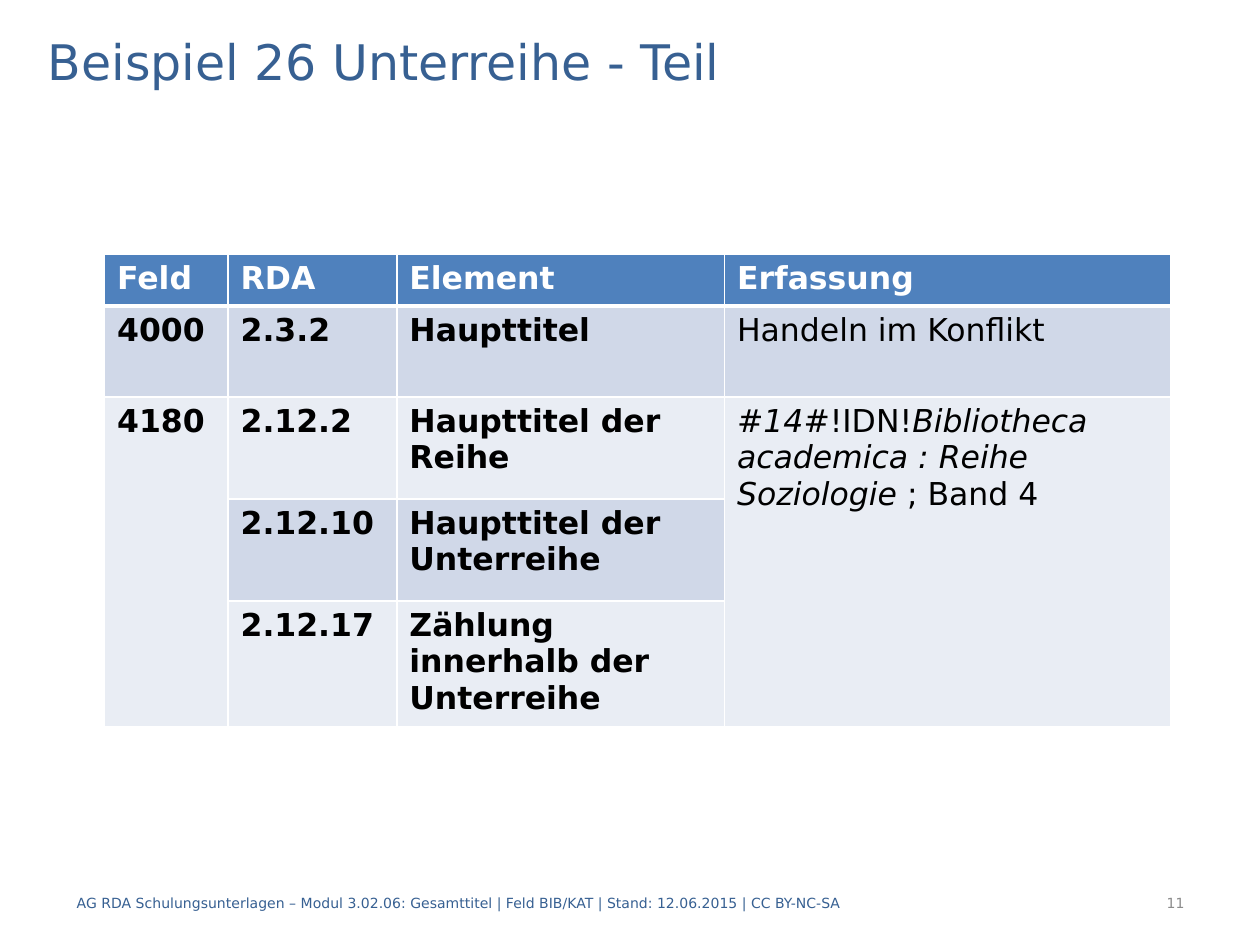
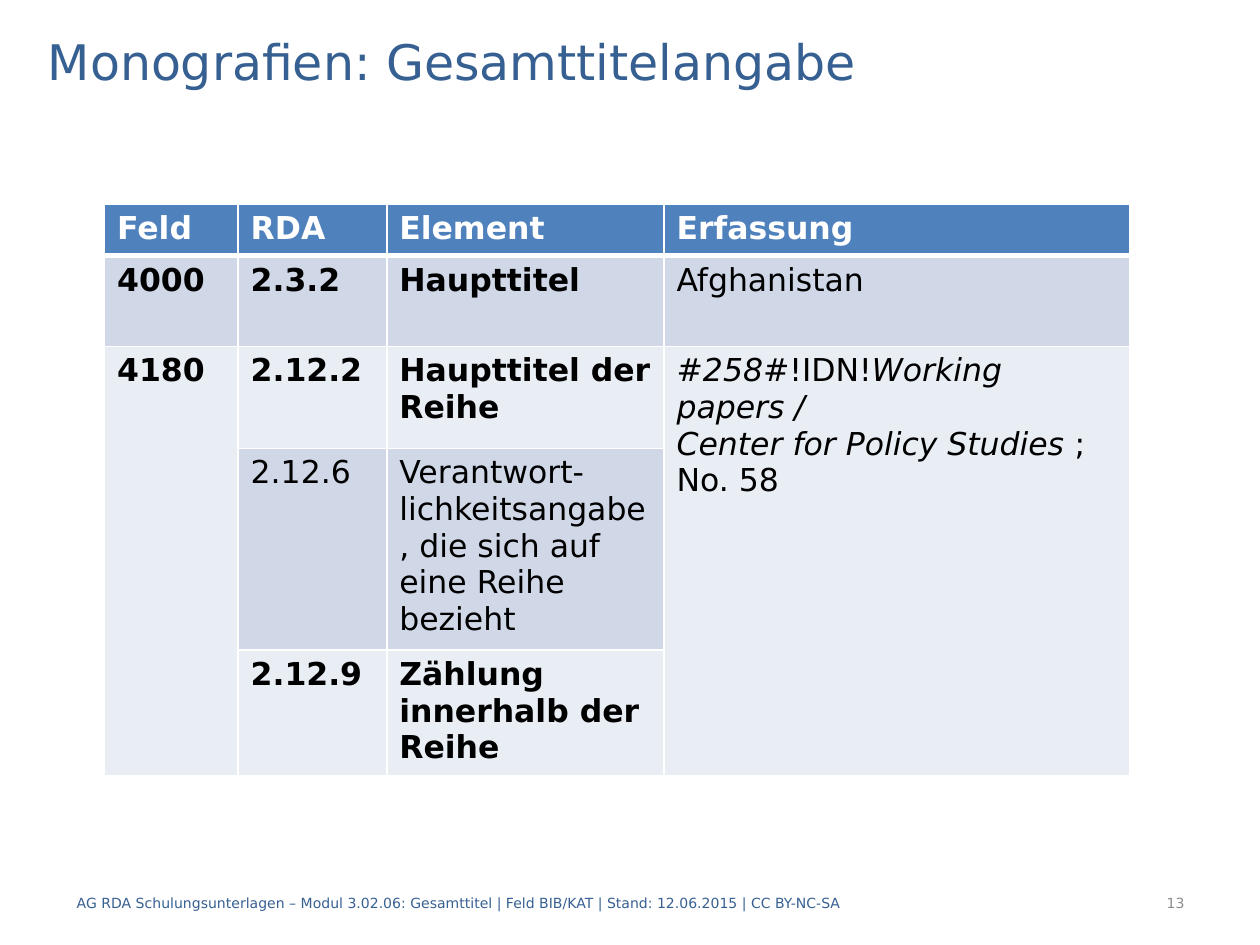
from lxml import etree
from pptx import Presentation
from pptx.dml.color import RGBColor
from pptx.enum.text import MSO_ANCHOR, MSO_AUTO_SIZE, PP_ALIGN
from pptx.oxml.ns import qn
from pptx.util import Inches, Pt

LEFT, RIGHT = PP_ALIGN.LEFT, PP_ALIGN.RIGHT
MIDDLE = MSO_ANCHOR.MIDDLE
NO_AUTOFIT = MSO_AUTO_SIZE.NONE
TITLE_ONLY = 5

FONT = "DejaVu Sans"
NAVY, GREY, WHITE, BLACK = "376092", "8C8C8C", "FFFFFF", "000000"
HEADER_FILL = "4F81BD"
BAND_FILLS = ("D0D8E8", "E9EDF4")

HEADINGS = ("Feld", "RDA", "Element", "Erfassung")
ROW_HEIGHTS = (0.41, 0.72, 0.81, 0.81, 0.81)
FOOTER = ("AG RDA Schulungsunterlagen – Modul 3.02.06: Gesamttitel | "
          "Feld BIB/KAT | Stand: 12.06.2015 | CC BY-NC-SA")

# Series elements are (RDA number, element name, is core element).
# A series statement is a list of paragraphs, each a list of (text, italic).
EXAMPLES = [
    {
        "title": "Beispiel 26 Unterreihe - Teil",
        "page": "11",
        "table_at": (0.83, 2.02),
        "widths": (0.98, 1.34, 2.6, 3.54),
        "main_title": "Handeln im Konflikt",
        "elements": [
            ("2.12.2", "Haupttitel der Reihe", True),
            ("2.12.10", "Haupttitel der Unterreihe", True),
            ("2.12.17", "Zählung innerhalb der Unterreihe", True),
        ],
        "statement": [
            [("#", False), ("14", True), ("#!IDN!", False),
             ("Bibliotheca academica : Reihe Soziologie ", True),
             ("; Band 4", False)],
        ],
    },
    {
        "title": "Monografien: Gesamttitelangabe",
        "page": "13",
        "table_at": (0.83, 1.62),
        "widths": (1.06, 1.18, 2.2, 3.7),
        "main_title": "Afghanistan",
        "elements": [
            ("2.12.2", "Haupttitel der Reihe", True),
            ("2.12.6", "Verantwort-lichkeitsangabe, die sich auf eine Reihe bezieht",
             False),
            ("2.12.9", "Zählung innerhalb der Reihe", True),
        ],
        "statement": [
            [("#", False), ("258", True), ("#!IDN!", False),
             ("Working papers /", True)],
            [("Center for Policy Studies ", True), (";", False)],
            [("No. 58", False)],
        ],
    },
]


def rgb(color):
    return RGBColor.from_string(color)


def style(paragraph, size, color, bold=False, align=LEFT):
    paragraph.alignment = align
    font = paragraph.font
    font.name, font.size, font.bold = FONT, Pt(size), bold
    font.color.rgb = rgb(color)


def add_title(slide, text):
    title = slide.shapes.title
    title.left, title.top = Inches(0.28), Inches(0.2)
    title.width, title.height = Inches(9.45), Inches(0.56)
    frame = title.text_frame
    frame.auto_size = NO_AUTOFIT
    frame.vertical_anchor = MIDDLE
    frame.text = text
    style(frame.paragraphs[0], 28, NAVY)


def add_footer_text(slide, left, width, text, color, align=LEFT):
    box = slide.shapes.add_textbox(Inches(left), Inches(6.97), Inches(width), Inches(0.4))
    frame = box.text_frame
    frame.word_wrap = True
    frame.vertical_anchor = MIDDLE
    frame.text = text
    style(frame.paragraphs[0], 8, color, align=align)


def set_borders(cell, widths):
    """Draw white borders; widths maps a side (L, R, T, B) to points."""
    properties = cell._tc.get_or_add_tcPr()
    for side, width in widths.items():
        line = etree.SubElement(properties, qn(f"a:ln{side}"), w=str(Pt(width)))
        fill = etree.SubElement(line, qn("a:solidFill"))
        etree.SubElement(fill, qn("a:srgbClr"), val=WHITE)


def fill_cell(cell, text, bold=False, color=BLACK):
    cell.text = text
    style(cell.text_frame.paragraphs[0], 18, color, bold)


def fill_statement(cell, paragraphs):
    frame = cell.text_frame
    for index, parts in enumerate(paragraphs):
        paragraph = frame.add_paragraph() if index else frame.paragraphs[0]
        style(paragraph, 18, BLACK)
        for text, italic in parts:
            run = paragraph.add_run()
            run.text = text
            run.font.italic = italic


def paint_cells(table):
    """Give the header, the bands and the merged columns their fills and borders."""
    last_column = len(HEADINGS) - 1
    for row in range(len(ROW_HEIGHTS)):
        for column in range(len(HEADINGS)):
            cell = table.cell(row, column)
            borders = {"L": 1, "R": 1, "T": 3 if row == 1 else 1, "B": 1 if row else 3}
            set_borders(cell, borders)
            band = min(row, 2) if column in (0, last_column) else row
            cell.fill.solid()
            cell.fill.fore_color.rgb = rgb(BAND_FILLS[(band - 1) % 2] if row else HEADER_FILL)


def add_record_table(slide, left, top, example):
    widths = example["widths"]
    table = slide.shapes.add_table(
        len(ROW_HEIGHTS), len(HEADINGS), Inches(left), Inches(top),
        Inches(sum(widths)), Inches(sum(ROW_HEIGHTS))).table
    for column, width in zip(table.columns, widths):
        column.width = Inches(width)
    for row, height in zip(table.rows, ROW_HEIGHTS):
        row.height = Inches(height)
    paint_cells(table)

    for column, heading in enumerate(HEADINGS):
        fill_cell(table.cell(0, column), heading, True, WHITE)
    for column, text in enumerate(("4000", "2.3.2", "Haupttitel")):
        fill_cell(table.cell(1, column), text, True)
    fill_cell(table.cell(1, 3), example["main_title"])

    for column in (0, 3):
        table.cell(2, column).merge(table.cell(4, column))
    fill_cell(table.cell(2, 0), "4180", True)
    fill_statement(table.cell(2, 3), example["statement"])
    for row, (number, element, is_core) in enumerate(example["elements"], start=2):
        fill_cell(table.cell(row, 1), number, is_core)
        fill_cell(table.cell(row, 2), element, is_core)


def add_example_slide(presentation, example):
    slide = presentation.slides.add_slide(presentation.slide_layouts[TITLE_ONLY])
    add_title(slide, example["title"])
    add_footer_text(slide, 0.51, 7.32, FOOTER, NAVY)
    add_footer_text(slide, 7.91, 1.59, example["page"], GREY, RIGHT)
    add_record_table(slide, *example["table_at"], example)


def main():
    presentation = Presentation()
    presentation.slide_width, presentation.slide_height = Inches(10), Inches(7.5)
    for example in EXAMPLES:
        add_example_slide(presentation, example)
    presentation.save("out.pptx")


if __name__ == "__main__":
    main()
